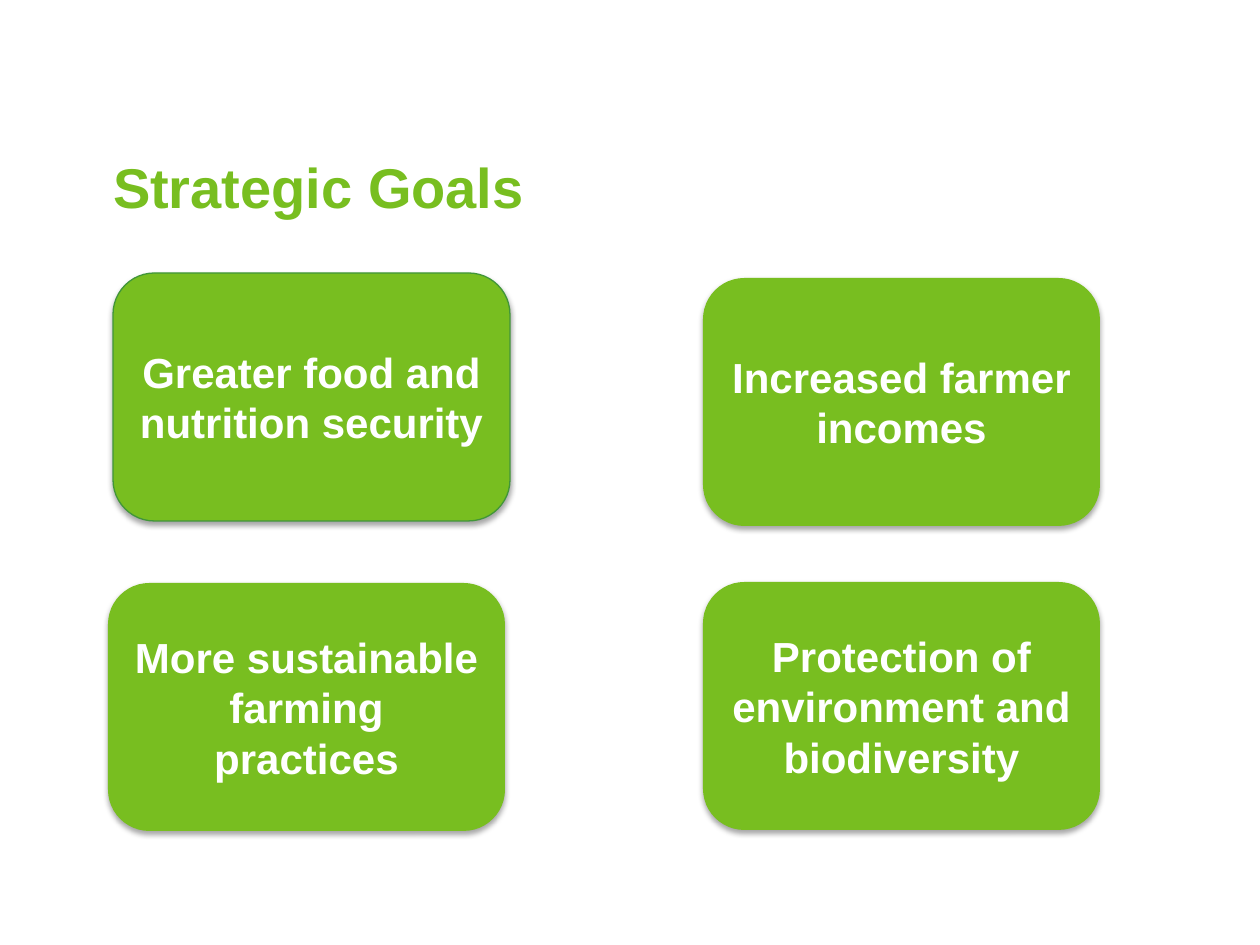
from dataclasses import dataclass

from lxml import etree
from pptx import Presentation
from pptx.dml.color import RGBColor
from pptx.enum.shapes import MSO_SHAPE as Shape
from pptx.enum.text import MSO_ANCHOR as Anchor, PP_ALIGN as Align
from pptx.oxml.ns import qn
from pptx.util import Emu, Pt

EMU_PER_PX = 914400 // 126
GREEN, DARK_GREEN, WHITE = "78BE20", "419639", "FFFFFF"
CARD_WIDTH, CARD_HEIGHT = 397, 248


@dataclass(frozen=True)
class GoalCard:
    left: int
    top: int
    text: str
    outline: str | None = None


CARDS = [
    GoalCard(703, 278, "Increased farmer incomes"),
    GoalCard(113, 273, "Greater food and nutrition security", DARK_GREEN),
    GoalCard(108, 583, "More sustainable farming practices"),
    GoalCard(703, 582, "Protection of environment and biodiversity"),
]


def px(length: int) -> Emu:
    return Emu(length * EMU_PER_PX)


def color(value: str) -> RGBColor:
    return RGBColor.from_string(value)


def style_text(paragraph, size: int, font_color: str) -> None:
    font = paragraph.font
    font.name, font.size, font.bold = "Arial", Pt(size), True
    font.color.rgb = color(font_color)


def add_soft_shadow(shape) -> None:
    shape.shadow.inherit = False
    effects = shape._element.spPr.find(qn("a:effectLst"))
    shadow = etree.SubElement(effects, qn("a:outerShdw"), blurRad=str(Pt(3.1)),
                              dist=str(Pt(1.8)), dir="5400000", rotWithShape="0")
    black = etree.SubElement(shadow, qn("a:srgbClr"), val="000000")
    etree.SubElement(black, qn("a:alpha"), val="35000")


def add_title(slide, text: str) -> None:
    frame = slide.shapes.add_textbox(px(113), px(164), px(1094), px(116)).text_frame
    frame.word_wrap = True
    frame.margin_left = frame.margin_top = frame.margin_right = frame.margin_bottom = 0
    paragraph = frame.paragraphs[0]
    paragraph.text = text
    paragraph.line_spacing = Pt(32)
    style_text(paragraph, 32, GREEN)


def add_card(slide, card: GoalCard) -> None:
    shape = slide.shapes.add_shape(Shape.ROUNDED_RECTANGLE, px(card.left), px(card.top),
                                   px(CARD_WIDTH), px(CARD_HEIGHT))
    shape.fill.solid()
    shape.fill.fore_color.rgb = color(GREEN)
    if card.outline:
        shape.line.color.rgb = color(card.outline)
        shape.line.width = Pt(0.75)
    else:
        shape.line.fill.background()
    add_soft_shadow(shape)

    frame = shape.text_frame
    frame.word_wrap = True
    frame.vertical_anchor = Anchor.MIDDLE
    paragraph = frame.paragraphs[0]
    paragraph.text = card.text
    paragraph.alignment = Align.CENTER
    style_text(paragraph, 24, WHITE)


def main() -> None:
    presentation = Presentation()
    presentation.slide_width, presentation.slide_height = px(1260), px(945)
    slide = presentation.slides.add_slide(presentation.slide_layouts[6])

    # Heading
    add_title(slide, "Strategic Goals")

    # Goal cards
    for card in CARDS:
        add_card(slide, card)

    presentation.save("out.pptx")


if __name__ == "__main__":
    main()
